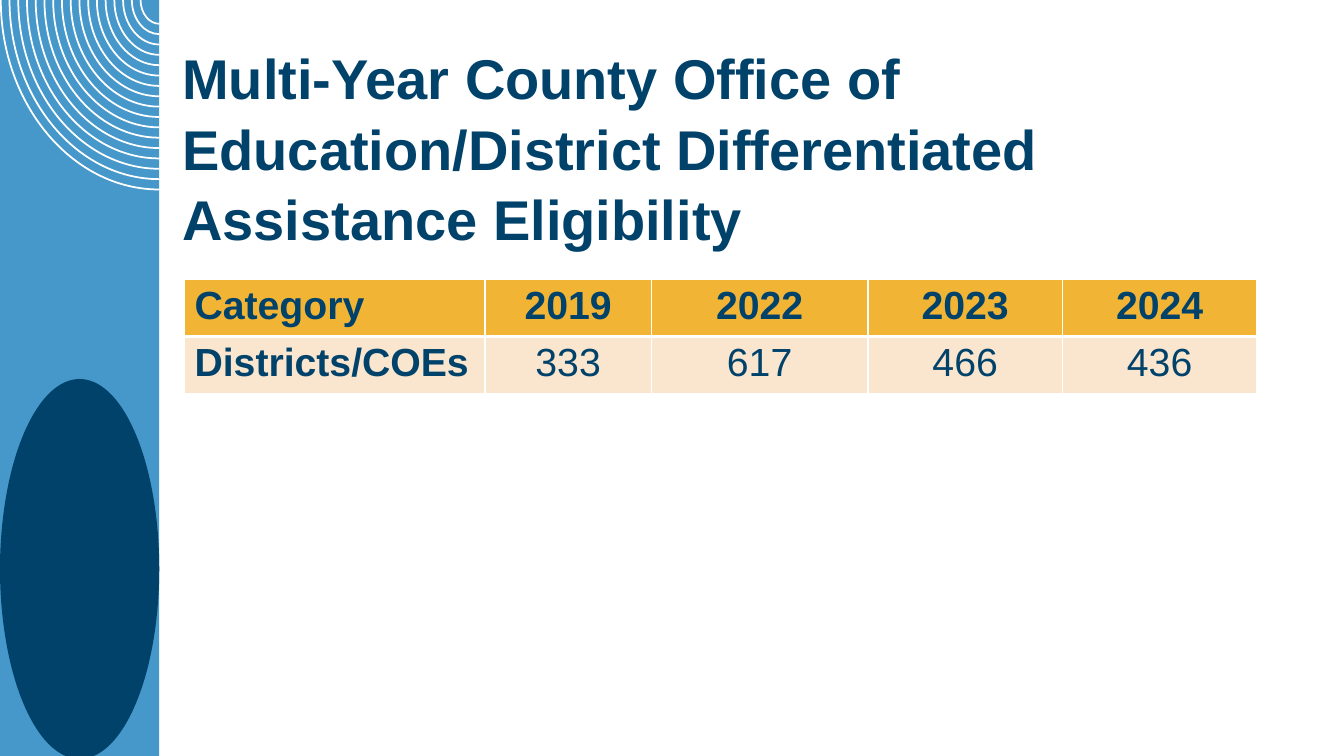
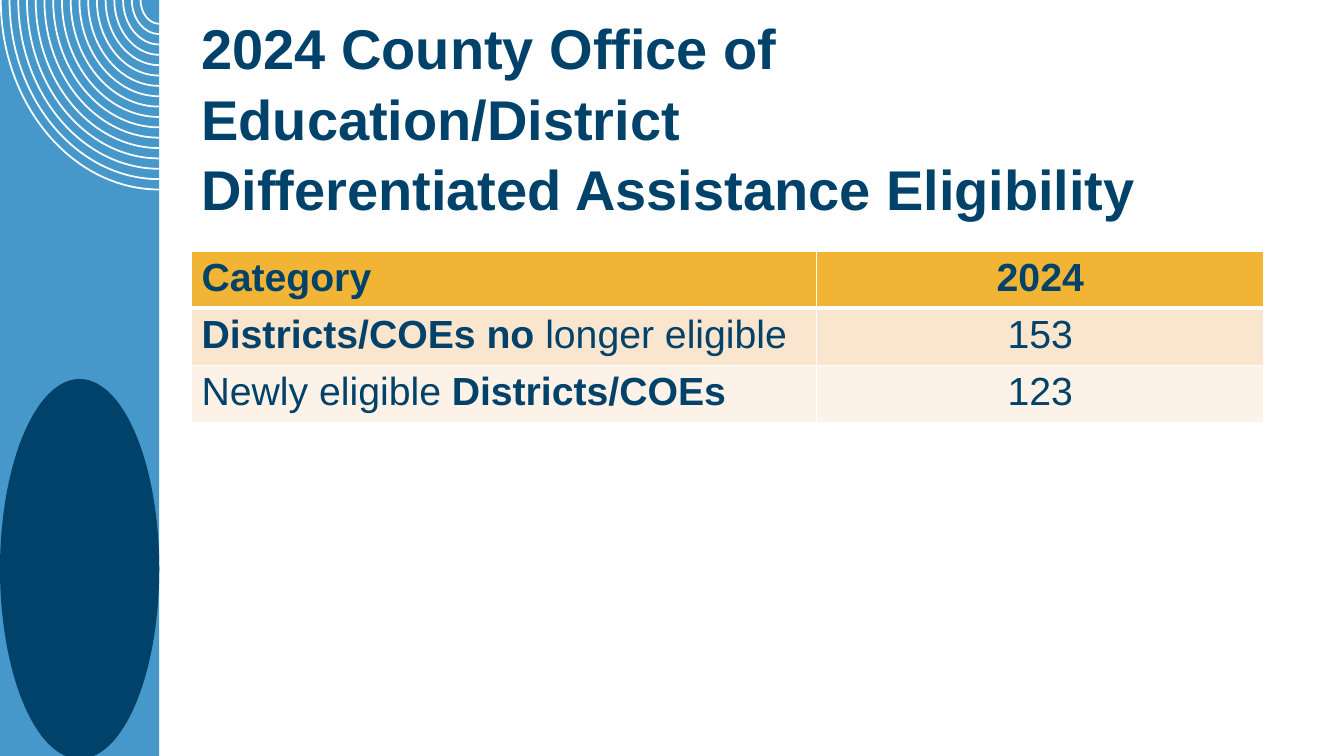
"""Build two slides on differentiated assistance eligibility."""
from dataclasses import dataclass
from typing import NamedTuple

from pptx import Presentation
from pptx.dml.color import RGBColor as Rgb
from pptx.enum.shapes import MSO_SHAPE as Kind
from pptx.enum.text import MSO_ANCHOR as Anchor, PP_ALIGN as Align
from pptx.oxml.xmlchemy import OxmlElement as Node
from pptx.util import Emu, Inches, Pt

WIDE, HIGH = Inches(13.333), Inches(7.5)
SKY, NAVY, WHITE = "4698CA", "01426A", "FFFFFF"
GOLD, SAND, CREAM = "F1B434", "FAE5CE", "FCF2E8"
SIDE = 11.85
RINGS, BEND = 17, 0.55
ROW = 7.07
FONT = {"name": "Arial", "size": Pt(28), "bold": False}
HEAD = {**FONT, "size": Pt(40), "bold": True}
PADS = {"margin_left": Inches(0.1), "margin_right": Inches(0.1),
        "margin_top": 0, "margin_bottom": 0,
        "vertical_anchor": Anchor.BOTTOM, "word_wrap": True}


class Run(NamedTuple):
    text: str
    bold: bool = False


class Spot(NamedTuple):
    left: float
    top: float


Cell = tuple[Run, ...]


@dataclass
class Page:
    title: tuple[str, ...]
    head: Spot
    grid: Spot
    cols: tuple[float, ...]
    rows: list[list[Cell]]


def across(share: float) -> Emu:
    return Emu(round(WIDE * share / 100))


def down(share: float) -> Emu:
    return Emu(round(HIGH * share / 100))


def tint(hue: str) -> Rgb:
    return Rgb.from_string(hue)


def apply(item, form: dict) -> None:
    for key, value in form.items():
        setattr(item, key, value)


def style(run, form: dict) -> None:
    apply(run.font, form)
    run.font.color.rgb = tint(NAVY)


def paint(shape, hue: str) -> None:
    shape.shadow.inherit = False
    shape.fill.solid()
    shape.fill.fore_color.rgb = tint(hue)
    shape.line.fill.background()


def curve(line) -> None:
    start, end = (
        [int(knot[0].get(key)) for key in "xy"]
        for knot in (line.getprevious(), line))
    wide, high = end[0] - start[0], end[1] - start[1]
    bend = Node("a:cubicBezTo")
    for x, y in ((start[0], start[1] + BEND * high),
                 (end[0] - BEND * wide, end[1]), end):
        knot = Node("a:pt")
        knot.set("x", str(round(x)))
        knot.set("y", str(round(y)))
        bend.append(knot)
    line.getparent().replace(line, bend)


def draw_rings(slide) -> None:
    pen = None
    for n in range(RINGS):
        start = across(0.06 + n * 0.65), 0
        if pen is None:
            pen = slide.shapes.build_freeform(*start, scale=1.0)
        else:
            pen.move_to(*start)
        end = across(SIDE), down(25.07 - n * 1.37)
        pen.add_line_segments([end], close=False)
    rings = pen.convert_to_shape()
    for line in rings._element.xpath(".//a:lnTo"):
        curve(line)
    rings.shadow.inherit = False
    rings.fill.background()
    rings.line.color.rgb = tint(WHITE)
    rings.line.width = Pt(1.25)


def draw_side(slide) -> None:
    add = slide.shapes.add_shape
    paint(add(Kind.RECTANGLE, 0, 0, across(SIDE), HIGH), SKY)
    draw_rings(slide)
    paint(add(Kind.OVAL, 0, down(50.13), across(SIDE), down(50.27)), NAVY)


def draw_title(slide, lines: tuple[str, ...], spot: Spot) -> None:
    box = slide.shapes.add_textbox(
        across(spot.left), down(spot.top), across(80.7), down(28))
    apply(box.text_frame, PADS)
    para = box.text_frame.paragraphs[0]
    para.line_spacing = 1.05
    for n, line in enumerate(lines):
        if n:
            para.add_line_break()
        run = para.add_run()
        run.text = line
        style(run, HEAD)


def edge(cell, first: bool) -> None:
    props = cell._tc.get_or_add_tcPr()
    for n, side in enumerate("LRTB"):
        line = Node(f"a:ln{side}")
        line.set("w", str(Pt(3 if first and side == "B" else 1)))
        fill, hue = Node("a:solidFill"), Node("a:srgbClr")
        hue.set("val", WHITE)
        fill.append(hue)
        line.append(fill)
        props.insert(n, line)


def fill_cell(cell, runs: Cell, hue: str, mid: bool) -> None:
    para = cell.text_frame.paragraphs[0]
    para.alignment = Align.CENTER if mid else Align.LEFT
    for part in runs:
        run = para.add_run()
        run.text = part.text
        style(run, {**FONT, "bold": part.bold})
    cell.fill.solid()
    cell.fill.fore_color.rgb = tint(hue)
    edge(cell, hue == GOLD)


def draw_grid(slide, page: Page) -> None:
    count = len(page.rows)
    table = slide.shapes.add_table(
        count, len(page.cols), across(page.grid.left), down(page.grid.top),
        across(sum(page.cols)), down(ROW * count)).table
    table.horz_banding = False
    for col, share in zip(table.columns, page.cols):
        col.width = across(share)
    for r, (row, hue) in enumerate(zip(page.rows, (GOLD, SAND, CREAM))):
        table.rows[r].height = down(ROW)
        for c, runs in enumerate(row):
            fill_cell(table.cell(r, c), runs, hue, c > 0)


def cells(*texts: str, bold: bool = False) -> list[Cell]:
    return [(Run(text, bold),) for text in texts]


PAGES = [
    Page(("Multi-Year County Office of Education/District Differentiated "
          "Assistance Eligibility",),
         Spot(12.83, 5.33), Spot(13.73, 36.93),
         (22.35, 12.38, 16.12, 14.47, 14.47),
         [cells("Category", "2019", "2022", "2023", "2024", bold=True),
          cells("Districts/COEs", bold=True)
          + cells("333", "617", "466", "436")]),
    Page(("2024 County Office of Education/District",
          "Differentiated Assistance Eligibility"),
         Spot(14.25, 1.33), Spot(14.25, 33.2), (46.5, 33.3),
         [cells("Category", "2024", bold=True),
          [(Run("Districts/COEs no", True), Run(" longer eligible")),
           (Run("153"),)],
          [(Run("Newly eligible "), Run("Districts/COEs", True)),
           (Run("123"),)]]),
]


def main() -> None:
    deck = Presentation()
    apply(deck, {"slide_width": WIDE, "slide_height": HIGH})
    for page in PAGES:
        slide = deck.slides.add_slide(deck.slide_layouts[6])
        draw_side(slide)
        draw_title(slide, page.title, page.head)
        draw_grid(slide, page)
    deck.save("out.pptx")


if __name__ == "__main__":
    main()
